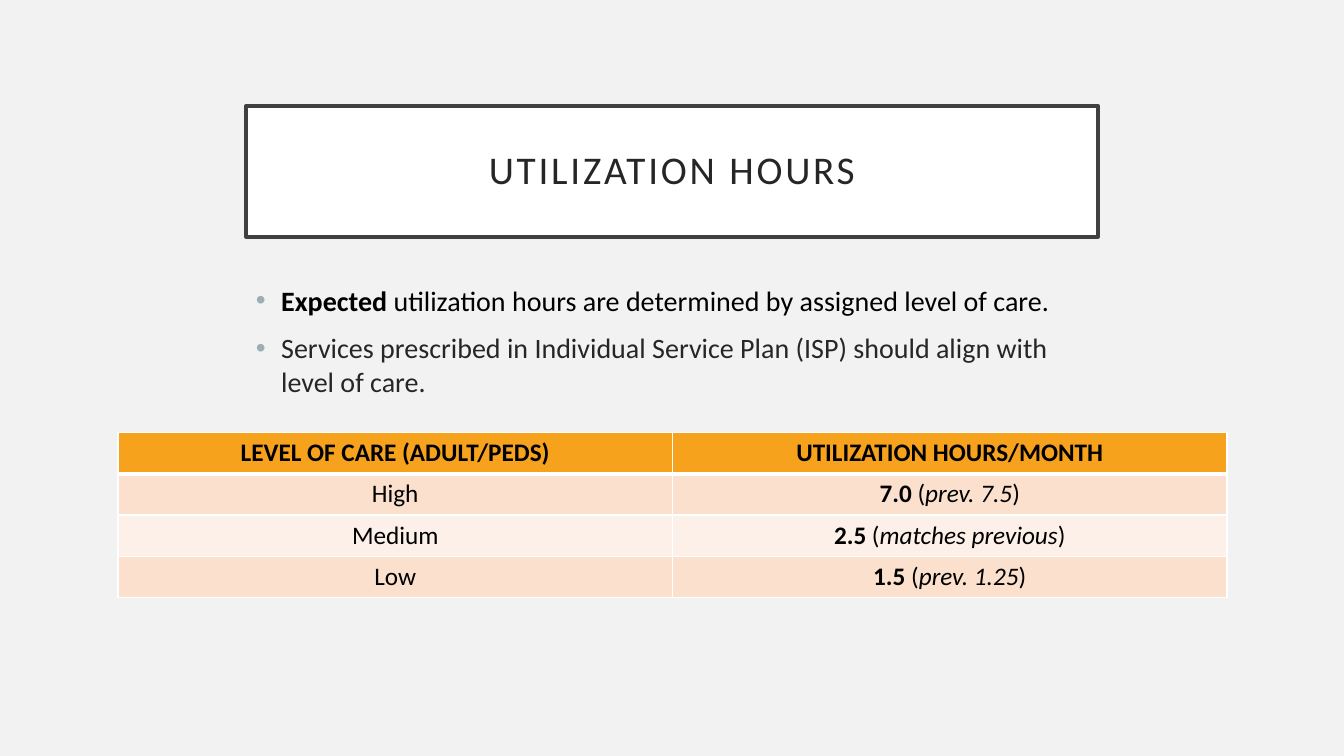
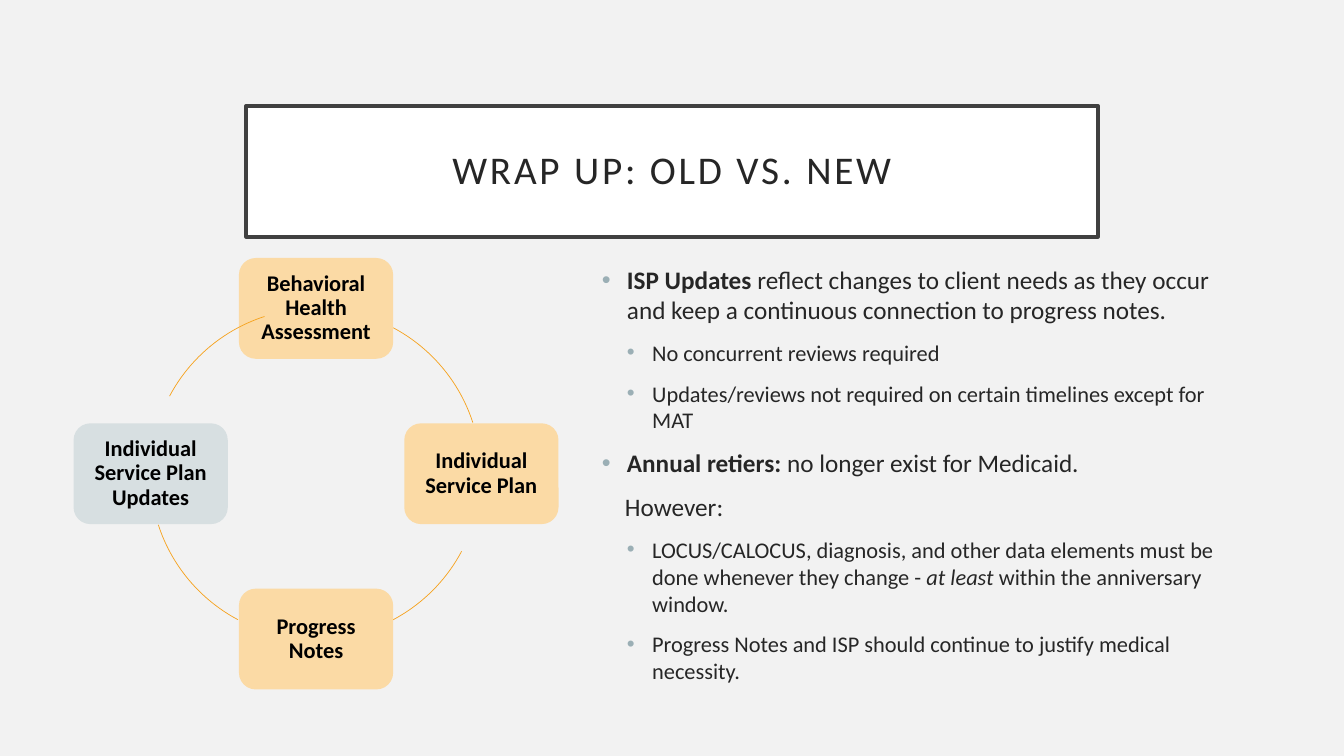
"""Build two slides on care hours and the service plan cycle."""
import math
from dataclasses import dataclass
from typing import NamedTuple

import lxml.etree
import pptx
import pptx.dml.color
import pptx.enum.shapes
import pptx.enum.text
import pptx.oxml.ns
import pptx.shapes.autoshape
import pptx.slide
import pptx.table
import pptx.text.text
import pptx.util

SCALE = 9144
ALIGN = pptx.enum.text.PP_ALIGN
ANCHOR = pptx.enum.text.MSO_ANCHOR
SHAPE = pptx.enum.shapes.MSO_SHAPE
qn = pptx.oxml.ns.qn


@dataclass(frozen=True)
class Theme:
    font: str = "Calibri"
    back: str = "F2F2F2"
    white: str = "FFFFFF"
    frame: str = "404040"
    ink: str = "262626"
    black: str = "000000"
    dot: str = "9BAFB5"
    gold: str = "F6A21D"
    sand: str = "FBDAA5"
    mist: str = "D7DFE1"
    peach: str = "FBE0CD"
    cream: str = "FDF0E8"
    title: int = 28
    lead: int = 20
    body: int = 18
    small: int = 16
    gap: int = 10
    tight: float = 0.9


THEME = Theme()


class Box(NamedTuple):
    left: int
    top: int
    width: int
    height: int


class Run(NamedTuple):
    text: str
    bold: bool = False
    slant: bool = False
    ink: str = THEME.ink


class Item(NamedTuple):
    runs: list[Run]
    size: int
    level: int = 0
    dot: bool = True


class Card(NamedTuple):
    text: str
    fill: str


TITLE = Box(244, 105, 845, 130)
CARD = (153, 100)
HUB = (313, 470)
RADIUS = 164
STEP = 25
INSET = 23

HOURS = [
    Item([Run("Expected ", bold=True, ink=THEME.black),
          Run("utilization hours are determined by assigned level of care.", ink=THEME.black)], THEME.lead),
    Item([Run("Services prescribed in Individual Service Plan (ISP) should align with level of care.")],
         THEME.lead),
]
HEADS = ["LEVEL OF CARE (ADULT/PEDS)", "UTILIZATION HOURS/MONTH"]
LEVELS = [("High", "7.0", "prev. 7.5"), ("Medium", "2.5", "matches previous"), ("Low", "1.5", "prev. 1.25")]
POINTS = [
    Item([Run("ISP Updates ", bold=True),
          Run("reflect changes to client needs as they occur and keep a continuous "
              "connection to progress notes.")], THEME.body),
    Item([Run("No concurrent reviews required")], THEME.small, 1),
    Item([Run("Updates/reviews not required on certain timelines except for MAT")], THEME.small, 1),
    Item([Run("Annual retiers: ", bold=True), Run("no longer exist for Medicaid.")], THEME.body),
    Item([Run("However:")], THEME.body, dot=False),
    Item([Run("LOCUS/CALOCUS, diagnosis, and other data elements must be done whenever they change - "),
          Run("at least ", slant=True), Run("within the anniversary window.")], THEME.small, 1),
    Item([Run("Progress Notes and ISP should continue to justify medical necessity.")], THEME.small, 1),
]
CARDS = [
    Card("Behavioral Health Assessment", THEME.sand),
    Card("Individual Service Plan", THEME.sand),
    Card("Progress Notes", THEME.sand),
    Card("Individual Service Plan Updates", THEME.mist),
]


def px(count: int) -> pptx.util.Emu:
    return pptx.util.Emu(count * SCALE)


def place(box: Box) -> list[pptx.util.Emu]:
    return [px(side) for side in box]


def tint(code: str) -> pptx.dml.color.RGBColor:
    return pptx.dml.color.RGBColor.from_string(code)


def paint(fill: pptx.dml.fill.FillFormat, code: str) -> None:
    fill.solid()
    fill.fore_color.rgb = tint(code)


def add_runs(para: pptx.text.text._Paragraph, runs: list[Run], size: int, track: int = 0) -> None:
    for part in runs:
        run = para.add_run()
        run.text = part.text
        font = run.font
        font.name, font.size = THEME.font, pptx.util.Pt(size)
        font.bold, font.italic = part.bold, part.slant
        font.color.rgb = tint(part.ink)
        if track:
            run._r.get_or_add_rPr().set("spc", str(track * 100))


def set_frame(frame: pptx.text.text.TextFrame, inset: int) -> None:
    frame.word_wrap = True
    frame.auto_size = pptx.enum.text.MSO_AUTO_SIZE.NONE
    frame.vertical_anchor = ANCHOR.MIDDLE
    frame.margin_left = frame.margin_right = px(inset)
    frame.margin_top = frame.margin_bottom = px(inset)
    para = frame.paragraphs[0]
    para.alignment, para.line_spacing = ALIGN.CENTER, THEME.tight


def add_page(deck: pptx.presentation.Presentation, text: str) -> pptx.slide.Slide:
    page = deck.slides.add_slide(deck.slide_layouts[5])
    title = page.shapes.title
    title.left, title.top, title.width, title.height = place(TITLE)
    paint(title.fill, THEME.white)
    title.line.color.rgb = tint(THEME.frame)
    title.line.width = pptx.util.Pt(2.5)
    set_frame(title.text_frame, 20)
    add_runs(title.text_frame.paragraphs[0], [Run(text)], THEME.title, track=2)
    return page


def add_dot(para: pptx.text.text._Paragraph, level: int) -> None:
    props = para._p.get_or_add_pPr()
    props.set("marL", str(px(STEP * (level + 1))))
    props.set("indent", str(-px(STEP)))
    shade = lxml.etree.SubElement(props, qn("a:buClr"))
    lxml.etree.SubElement(shade, qn("a:srgbClr"), val=THEME.dot)
    lxml.etree.SubElement(props, qn("a:buFont"), typeface="Arial")
    lxml.etree.SubElement(props, qn("a:buChar"), char="•")


def add_list(page: pptx.slide.Slide, box: Box, items: list[Item], anchor: ANCHOR) -> None:
    frame = page.shapes.add_textbox(*place(box)).text_frame
    frame.word_wrap = True
    frame.vertical_anchor = anchor
    for rank, item in enumerate(items):
        para = frame.add_paragraph() if rank else frame.paragraphs[0]
        para.level = item.level
        para.space_before = pptx.util.Pt(THEME.gap)
        if item.dot:
            add_dot(para, item.level)
        else:
            para._p.get_or_add_pPr().set("marL", str(px(INSET)))
        add_runs(para, item.runs, item.size)


def add_edge(cell: pptx.table._Cell, side: str, width: int) -> None:
    props = cell._tc.get_or_add_tcPr()
    edge = lxml.etree.SubElement(props, qn(f"a:ln{side}"), w=str(pptx.util.Pt(width)))
    fill = lxml.etree.SubElement(edge, qn("a:solidFill"))
    lxml.etree.SubElement(fill, qn("a:srgbClr"), val=THEME.white)


def add_grid(page: pptx.slide.Slide, box: Box) -> None:
    rows = [[[Run(head, bold=True, ink=THEME.black)] for head in HEADS]]
    for name, hours, note in LEVELS:
        parts = [Run(hours, bold=True), Run(" ("), Run(note, slant=True), Run(")")]
        rows.append([[Run(name, ink=THEME.black)], [part._replace(ink=THEME.black) for part in parts]])
    grid = page.shapes.add_table(len(rows), len(HEADS), *place(box)).table
    for row, line in enumerate(rows):
        shade = THEME.gold if row == 0 else THEME.peach if row % 2 else THEME.cream
        for col, runs in enumerate(line):
            cell = grid.cell(row, col)
            for side in "LRTB":
                thick = (row, side) in ((0, "B"), (1, "T"))
                add_edge(cell, side, 3 if thick else 1)
            paint(cell.fill, shade)
            para = cell.text_frame.paragraphs[0]
            para.alignment = ALIGN.CENTER
            add_runs(para, runs, THEME.body)


def add_arc(page: pptx.slide.Slide, turn: int) -> None:
    ring = Box(HUB[0] - RADIUS, HUB[1] - RADIUS, 2 * RADIUS, 2 * RADIUS)
    arc = page.shapes.add_shape(SHAPE.ARC, *place(ring))
    arc.shadow.inherit = False
    for slot, angle in enumerate((298, 342)):
        arc.adjustments[slot] = (angle + turn) % 360 * 0.6
    arc.fill.background()
    arc.line.color.rgb = tint(THEME.gold)
    arc.line.width = pptx.util.Pt(0.5)


def add_card(page: pptx.slide.Slide, card: Card, turn: int) -> None:
    wide, high = CARD
    angle = math.radians(turn)
    left = HUB[0] + round(RADIUS * math.sin(angle)) - wide // 2
    top = HUB[1] - round(RADIUS * math.cos(angle)) - high // 2
    shape = page.shapes.add_shape(SHAPE.ROUNDED_RECTANGLE, *place(Box(left, top, wide, high)))
    shape.shadow.inherit = False
    paint(shape.fill, card.fill)
    shape.line.fill.background()
    set_frame(shape.text_frame, 12)
    add_runs(shape.text_frame.paragraphs[0], [Run(card.text, bold=True, ink=THEME.black)], THEME.small)


def main() -> None:
    deck = pptx.Presentation()
    deck.slide_width, deck.slide_height = px(1333), px(750)
    paint(deck.slide_master.background.fill, THEME.back)

    page = add_page(deck, "UTILIZATION HOURS")
    add_list(page, Box(244, 276, 845, 150), HOURS, ANCHOR.TOP)
    add_grid(page, Box(117, 429, 1100, 164))

    page = add_page(deck, "WRAP UP: OLD VS. NEW")
    add_list(page, Box(587, 256, 652, 429), POINTS, ANCHOR.MIDDLE)
    for rank, card in enumerate(CARDS):
        add_arc(page, rank * 90)
        add_card(page, card, rank * 90)

    deck.save("out.pptx")


if __name__ == "__main__":
    main()
